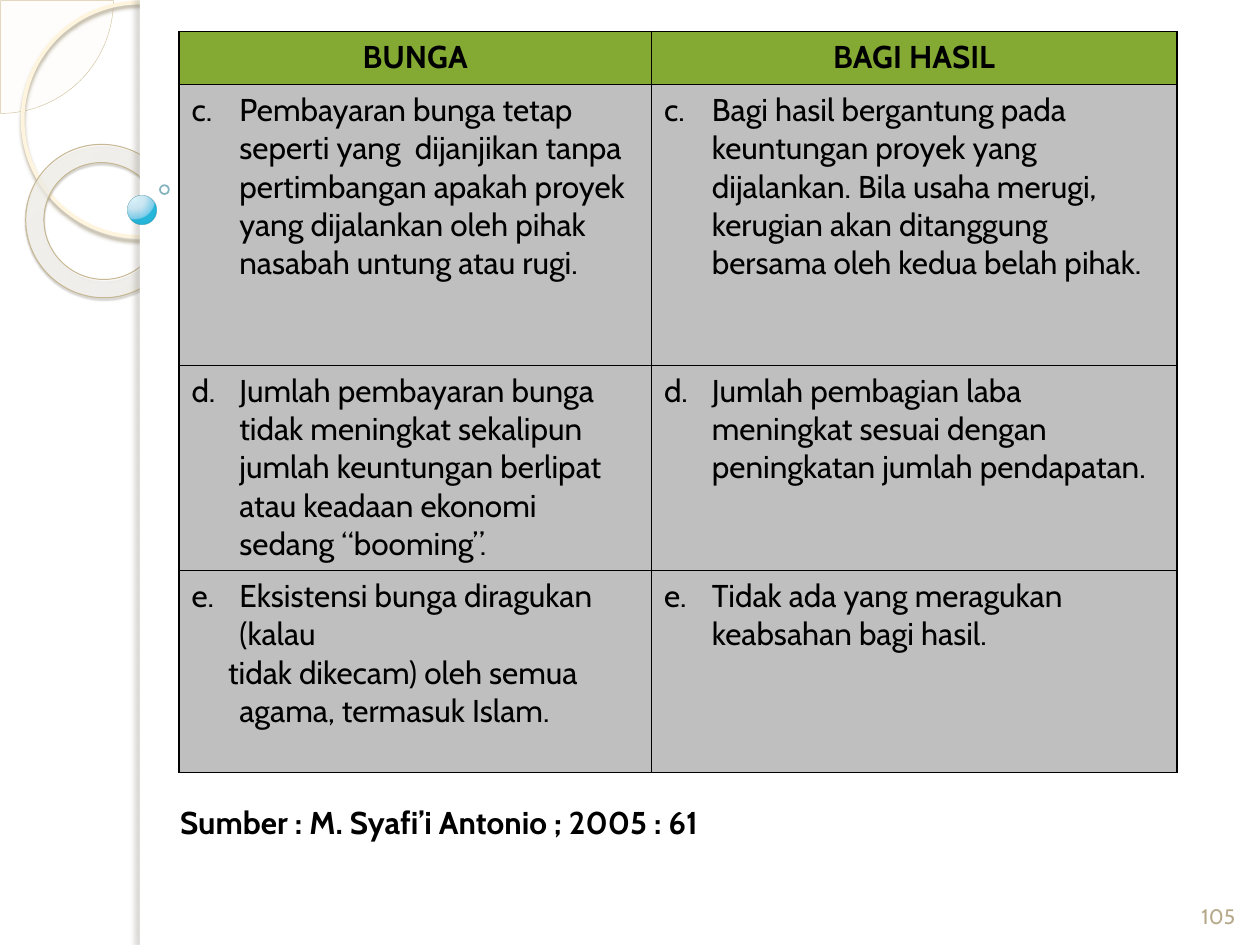
import dataclasses

import pptx
import pptx.dml.color
import pptx.enum.shapes
import pptx.enum.text
import pptx.oxml
import pptx.oxml.ns
import pptx.util

Inches = pptx.util.Inches
Pt = pptx.util.Pt
SHAPE = pptx.enum.shapes.MSO_SHAPE
ALIGN = pptx.enum.text.PP_ALIGN
ANCHOR = pptx.enum.text.MSO_ANCHOR


@dataclasses.dataclass(frozen=True)
class Theme:
    font: str = "Cabin"
    body_size: int = 18
    number_size: int = 12
    text: str = "000000"
    number: str = "B6A98A"
    white: str = "FFFFFF"
    header: str = "84AA33"
    body: str = "BFBFBF"
    pie: str = "FEFAF4"
    pie_line: str = "D3C39F"
    ring_line: str = "FFF5DE"
    donut_line: str = "C7B893"
    ball_line: str = "308EA5"
    bubble_line: str = "318093"
    # Gradient stops: position, colour, opacity (percent)
    donut: tuple = ((0, "FFFCF6", 70), (70, "FFFEFB", 55), (100, "F0D28E", 60))
    ball: tuple = ((0, "DAF4FF", 95), (50, "C3E3F0", 90),
                   (95, "6BC7E8", 88), (100, "00ABD5", 85))
    # Shadows: colour, opacity (percent), blur, distance (points), direction
    ring_shadow: tuple = ("B0A68F", 85, 2, 2, 90)
    donut_shadow: tuple = ("5A5444", 35, 1, 1.2, 75)
    edge_shadow: tuple = ("736F63", 25, 3, 3, 180)


THEME = Theme()
HANG = 0.38
HEADINGS = ("BUNGA", "BAGI HASIL")
# Each cell is a list of paragraphs; the first one carries the list letter
POINTS = (
    (["Pembayaran bunga tetap seperti yang  dijanjikan tanpa pertimbangan apakah "
      "proyek yang dijalankan oleh pihak nasabah untung atau rugi."],
     ["Bagi hasil bergantung pada keuntungan proyek yang dijalankan. Bila usaha "
      "merugi, kerugian akan ditanggung bersama oleh kedua belah pihak."]),
    (["Jumlah pembayaran bunga tidak meningkat sekalipun jumlah keuntungan berlipat "
      "atau keadaan ekonomi sedang “booming”."],
     ["Jumlah pembagian laba meningkat sesuai dengan peningkatan jumlah pendapatan."]),
    (["Eksistensi bunga diragukan (kalau",
      "tidak dikecam) oleh semua agama, termasuk Islam."],
     ["Tidak ada yang meragukan keabsahan bagi hasil."]),
)
FIRST_LETTER = 3  # the list goes on from "c."


def rgb(color):
    return pptx.dml.color.RGBColor.from_string(color)


def xml(markup):
    """Parse one DrawingML element written without its namespace declaration."""
    tag, rest = markup.split(" ", 1)
    return pptx.oxml.parse_xml(f"{tag} {pptx.oxml.ns.nsdecls('a')} {rest}")


def color_xml(color, opacity):
    return f'<a:srgbClr val="{color}"><a:alpha val="{opacity * 1000}"/></a:srgbClr>'


def add_ornament(slide, kind, box, fill=None, opacity=100, line=None, width=1,
                 line_opacity=100, shadow=None):
    shape = slide.shapes.add_shape(kind, *map(Inches, box))
    shape.shadow.inherit = False
    if fill:
        shape.fill.solid()
        shape.fill.fore_color.rgb = rgb(fill)
        shape.fill._xPr.find(".//" + pptx.oxml.ns.qn("a:srgbClr")).append(
            xml(f'<a:alpha val="{opacity * 1000}"/>'))
    else:
        shape.fill.background()
    if line:
        shape.line.color.rgb = rgb(line)
        shape.line.width = Pt(width)
        shape.line._ln.find(".//" + pptx.oxml.ns.qn("a:srgbClr")).append(
            xml(f'<a:alpha val="{line_opacity * 1000}"/>'))
    else:
        shape.line.fill.background()
    if shadow:
        color, strength, blur, distance, angle = shadow
        effects = shape._element.spPr.find(pptx.oxml.ns.qn("a:effectLst"))
        effects.append(xml(
            f'<a:outerShdw blurRad="{Pt(blur)}" dist="{Pt(distance)}" '
            f'dir="{angle * 60000}" algn="ctr" rotWithShape="0">'
            f"{color_xml(color, strength)}</a:outerShdw>"))
    return shape


def set_radial_gradient(shape, stops, focus):
    """Swap the empty fill for a circular gradient with transparent stops."""
    marks = "".join(f'<a:gs pos="{pos * 1000}">{color_xml(color, opacity)}</a:gs>'
                    for pos, color, opacity in stops)
    left, top, right, bottom = (edge * 1000 for edge in focus)
    empty = shape._element.spPr.find(pptx.oxml.ns.qn("a:noFill"))
    empty.getparent().replace(empty, xml(
        f'<a:gradFill rotWithShape="1"><a:gsLst>{marks}</a:gsLst><a:path path="circle">'
        f'<a:fillToRect l="{left}" t="{top}" r="{right}" b="{bottom}"/>'
        "</a:path></a:gradFill>"))


def style_runs(paragraph, size, color, bold=False):
    for run in paragraph.runs:
        run.font.name = THEME.font
        run.font.size = Pt(size)
        run.font.bold = bold
        run.font.color.rgb = rgb(color)


def add_plain_table(slide, box, columns, rows):
    table = slide.shapes.add_table(len(rows), len(columns), *map(Inches, box)).table
    table.first_row = table.horz_banding = False
    for column, width in zip(table.columns, columns):
        column.width = Inches(width)
    for row, height in zip(table.rows, rows):
        row.height = Inches(height)
    return table


def fill_cell(cell, paragraphs, fill, border, bold=False, align=None):
    cell.text_frame.text = "\n".join(paragraphs)
    for paragraph in cell.text_frame.paragraphs:
        paragraph.alignment = align
        style_runs(paragraph, THEME.body_size, THEME.text, bold)
    cell.fill.solid()
    cell.fill.fore_color.rgb = rgb(fill)
    for place, side in enumerate("LRTB"):
        cell._tc.get_or_add_tcPr().insert(place, xml(
            f'<a:ln{side} w="{Pt(1)}"><a:solidFill>{color_xml(border, 100)}'
            f"</a:solidFill></a:ln{side}>"))


def letter_paragraphs(cell, number):
    """Hang the cell's text behind its list letter."""
    for place, paragraph in enumerate(cell.text_frame.paragraphs):
        props = paragraph._p.get_or_add_pPr()
        props.set("marL", str(Inches(HANG)))
        if place == 0:
            props.set("indent", str(Inches(-HANG)))
            props.append(xml(f'<a:buAutoNum type="alphaLcPeriod" startAt="{number}"/>'))
        else:
            props.set("indent", str(Inches(-0.09)))


def add_side_ornaments(slide):
    pie = add_ornament(slide, SHAPE.PIE, (-0.89, -0.89, 1.79, 1.79), THEME.pie, 33,
                       THEME.pie_line, 0.25)
    pie.adjustments[0], pie.adjustments[1] = 0, 54
    add_ornament(slide, SHAPE.OVAL, (0.18, 0.02, 1.86, 1.86), line=THEME.ring_line,
                 width=2.15, shadow=THEME.ring_shadow)
    donut = add_ornament(slide, SHAPE.DONUT, (0.2, 1.15, 1.23, 1.21),
                         line=THEME.donut_line, width=0.58, shadow=THEME.donut_shadow)
    donut.adjustments[0] = 0.12
    donut.rotation = 38.6
    set_radial_gradient(donut, THEME.donut, (-408, -50, 508, 150))
    # White page and its shaded left edge
    add_ornament(slide, SHAPE.RECTANGLE, (1.11, 0, 8.89, 7.5), THEME.white)
    add_ornament(slide, SHAPE.RECTANGLE, (1.11, 0, 0.08, 7.5), THEME.white,
                 shadow=THEME.edge_shadow)
    ball = add_ornament(slide, SHAPE.OVAL, (1.01, 1.55, 0.23, 0.23),
                        line=THEME.ball_line, width=0.16, line_opacity=60)
    set_radial_gradient(ball, THEME.ball, (25, 12, 75, 88))
    add_ornament(slide, SHAPE.OVAL, (1.27, 1.47, 0.07, 0.07), line=THEME.bubble_line,
                 line_opacity=60)


def add_comparison(slide):
    table = add_plain_table(slide, (1.42, 0.25, 7.92, 5.88), (3.75, 4.17),
                            (0.42, 2.23, 1.63, 1.6))
    for column, heading in enumerate(HEADINGS):
        fill_cell(table.cell(0, column), [heading], THEME.header, THEME.text, True,
                  ALIGN.CENTER)
    for row, point in enumerate(POINTS):
        for column, paragraphs in enumerate(point):
            cell = table.cell(row + 1, column)
            fill_cell(cell, paragraphs, THEME.body, THEME.text)
            letter_paragraphs(cell, FIRST_LETTER + row)


def add_citation(slide):
    table = add_plain_table(slide, (1.33, 6.33, 6.67, 0.4), (6.67,), (0.4,))
    fill_cell(table.cell(0, 0), ["Sumber : M. Syafi’i Antonio ; 2005 : 61"],
              THEME.white, THEME.white, True)


def add_page_number(slide):
    frame = slide.shapes.add_textbox(*map(Inches, (9.42, 6.9, 0.5, 0.52))).text_frame
    frame.word_wrap = True
    frame.vertical_anchor = ANCHOR.BOTTOM
    frame.text = "105"
    frame.paragraphs[0].alignment = ALIGN.CENTER
    style_runs(frame.paragraphs[0], THEME.number_size, THEME.number)


def main():
    deck = pptx.Presentation()
    deck.slide_width, deck.slide_height = Inches(10), Inches(7.5)
    slide = deck.slides.add_slide(deck.slide_layouts[6])
    add_side_ornaments(slide)
    add_page_number(slide)
    add_comparison(slide)
    add_citation(slide)
    deck.save("out.pptx")


if __name__ == "__main__":
    main()
